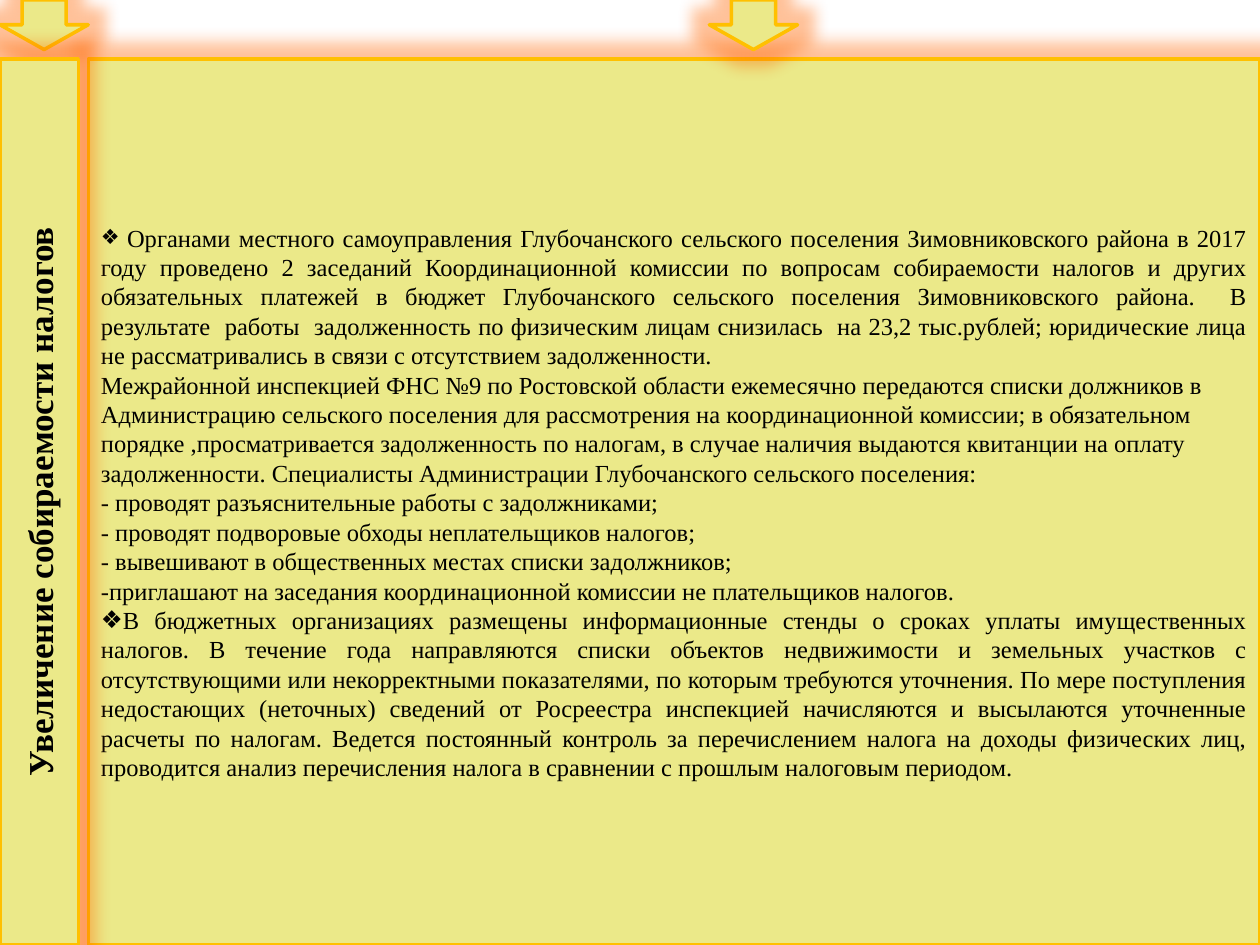
from lxml.etree import SubElement
from pptx import Presentation
from pptx.dml.color import RGBColor
from pptx.enum.shapes import MSO_SHAPE
from pptx.enum.text import MSO_ANCHOR, MSO_AUTO_SIZE, PP_ALIGN
from pptx.oxml.ns import qn
from pptx.util import Cm, Pt

COLORS = {"panel": "EBE989", "border": "FFC000", "glow": "FF6600", "text": "000000"}
FONT = "Times New Roman"
BULLET = "❖"
HEADING = "Увеличение собираемости налогов"
MEASURES = [
    (True, [(" ", 12), (
        "Органами местного самоуправления Глубочанского сельского поселения Зимовниковского "
        "района в 2017 году проведено 2 заседаний Координационной комиссии по вопросам "
        "собираемости налогов и других обязательных платежей в бюджет Глубочанского сельского "
        "поселения Зимовниковского района.  В результате  работы  задолженность по физическим "
        "лицам снизилась  на 23,2 тыс.рублей; юридические лица не рассматривались в связи с "
        "отсутствием задолженности.", 14)]),
    (False, [(
        "Межрайонной инспекцией ФНС №9 по Ростовской области ежемесячно передаются списки "
        "должников в Администрацию сельского поселения для рассмотрения на координационной "
        "комиссии; в обязательном порядке ,просматривается задолженность по налогам, в случае "
        "наличия выдаются квитанции на оплату задолженности. Специалисты Администрации "
        "Глубочанского сельского поселения:", 14)]),
    (False, [("- проводят разъяснительные работы с задолжниками;", 14)]),
    (False, [("- проводят подворовые обходы неплательщиков налогов;", 14)]),
    (False, [("- вывешивают в общественных местах списки задолжников;", 14)]),
    (False, [("-приглашают на заседания координационной комиссии не плательщиков налогов.", 14)]),
    (True, [(
        "В бюджетных организациях размещены информационные стенды о сроках уплаты "
        "имущественных налогов. В течение года направляются списки объектов недвижимости и "
        "земельных участков с отсутствующими или некорректными показателями, по которым "
        "требуются уточнения. По мере поступления недостающих (неточных) сведений от Росреестра "
        "инспекцией начисляются и высылаются уточненные расчеты по налогам. Ведется постоянный "
        "контроль за перечислением налога на доходы физических лиц, проводится анализ "
        "перечисления налога в сравнении с прошлым налоговым периодом.", 14)]),
]
PAGE_WIDTH, PAGE_HEIGHT = 25.4, 19.05
PANEL_LEFT, PANEL_TOP = 1.78, 1.19
PANEL_HEIGHT = PAGE_HEIGHT - PANEL_TOP
LABEL_WIDTH = 1.58
ARROW_WIDTH, ARROW_HEIGHT = 1.78, 1
ARROW_LEFTS = [14.3, 0]


def apply(target, formats):
    """Set every attribute named in formats on target."""
    for name, value in formats.items():
        setattr(target, name, value)


def place(box, left, top, width, height):
    """Position a shape from lengths in centimetres."""
    apply(box, {"left": Cm(left), "top": Cm(top), "width": Cm(width), "height": Cm(height)})


def decorate(box):
    """Give a shape the shared fill, border and glow."""
    box.fill.solid()
    box.fill.fore_color.rgb = RGBColor.from_string(COLORS["panel"])
    box.line.color.rgb = RGBColor.from_string(COLORS["border"])
    box.line.width = Pt(2)
    properties = box._element.spPr
    effects = SubElement(properties, qn("a:effectLst"))
    glow = SubElement(effects, qn("a:glow"), rad=str(Pt(18)))
    color = SubElement(glow, qn("a:srgbClr"), val=COLORS["glow"])
    SubElement(color, qn("a:alpha"), val="40000")


def set_geometry(box, preset):
    """Give a placeholder its own preset outline."""
    geometry = SubElement(box._element.spPr, qn("a:prstGeom"), prst=preset)
    SubElement(geometry, qn("a:avLst"))


def prepare_frame(box):
    """Set wrapping and vertical centring, and return the text frame."""
    apply(box.text_frame, {
        "word_wrap": True,
        "auto_size": MSO_AUTO_SIZE.NONE,
        "vertical_anchor": MSO_ANCHOR.MIDDLE,
    })
    return box.text_frame


def add_span(para, text, size, bold=False):
    """Append a formatted run to a paragraph."""
    span = para.add_run()
    span.text = text
    apply(span.font, {"name": FONT, "size": Pt(size), "bold": bold})
    span.font.color.rgb = RGBColor.from_string(COLORS["text"])


def fill_measures(box):
    """Write the bulleted and plain paragraphs."""
    frame = prepare_frame(box)
    for index, (bulleted, spans) in enumerate(MEASURES):
        para = frame.add_paragraph() if index else frame.paragraphs[0]
        properties = para._p.get_or_add_pPr()
        properties.set("marL", "0")
        properties.set("indent", "0")
        if bulleted:
            SubElement(properties, qn("a:buChar"), char=BULLET)
        else:
            SubElement(properties, qn("a:buNone"))
        apply(para, {
            "alignment": PP_ALIGN.JUSTIFY if bulleted else PP_ALIGN.LEFT,
            "space_before": Pt(0),
        })
        for text, size in spans:
            add_span(para, text, size)


def main():
    """Build the slide and save it."""
    deck = Presentation()
    apply(deck, {"slide_width": Cm(PAGE_WIDTH), "slide_height": Cm(PAGE_HEIGHT)})
    page = deck.slides.add_slide(deck.slide_layouts[1])
    label, panel = page.shapes.title, page.placeholders[1]

    place(panel, PANEL_LEFT, PANEL_TOP, PAGE_WIDTH - PANEL_LEFT, PANEL_HEIGHT)
    set_geometry(panel, "rect")
    decorate(panel)
    fill_measures(panel)

    for left in ARROW_LEFTS:
        arrow = page.shapes.add_shape(
            MSO_SHAPE.DOWN_ARROW, Cm(left), Cm(0), Cm(ARROW_WIDTH), Cm(ARROW_HEIGHT))
        decorate(arrow)

    place(label, (LABEL_WIDTH - PANEL_HEIGHT) / 2, PANEL_TOP + (PANEL_HEIGHT - LABEL_WIDTH) / 2,
          PANEL_HEIGHT, LABEL_WIDTH)
    label.rotation = 270
    set_geometry(label, "roundRect")
    decorate(label)
    heading = prepare_frame(label).paragraphs[0]
    heading.alignment = PP_ALIGN.CENTER
    add_span(heading, HEADING, 20, bold=True)
    page.shapes._spTree.append(label._element)

    deck.save("out.pptx")


if __name__ == "__main__":
    main()
